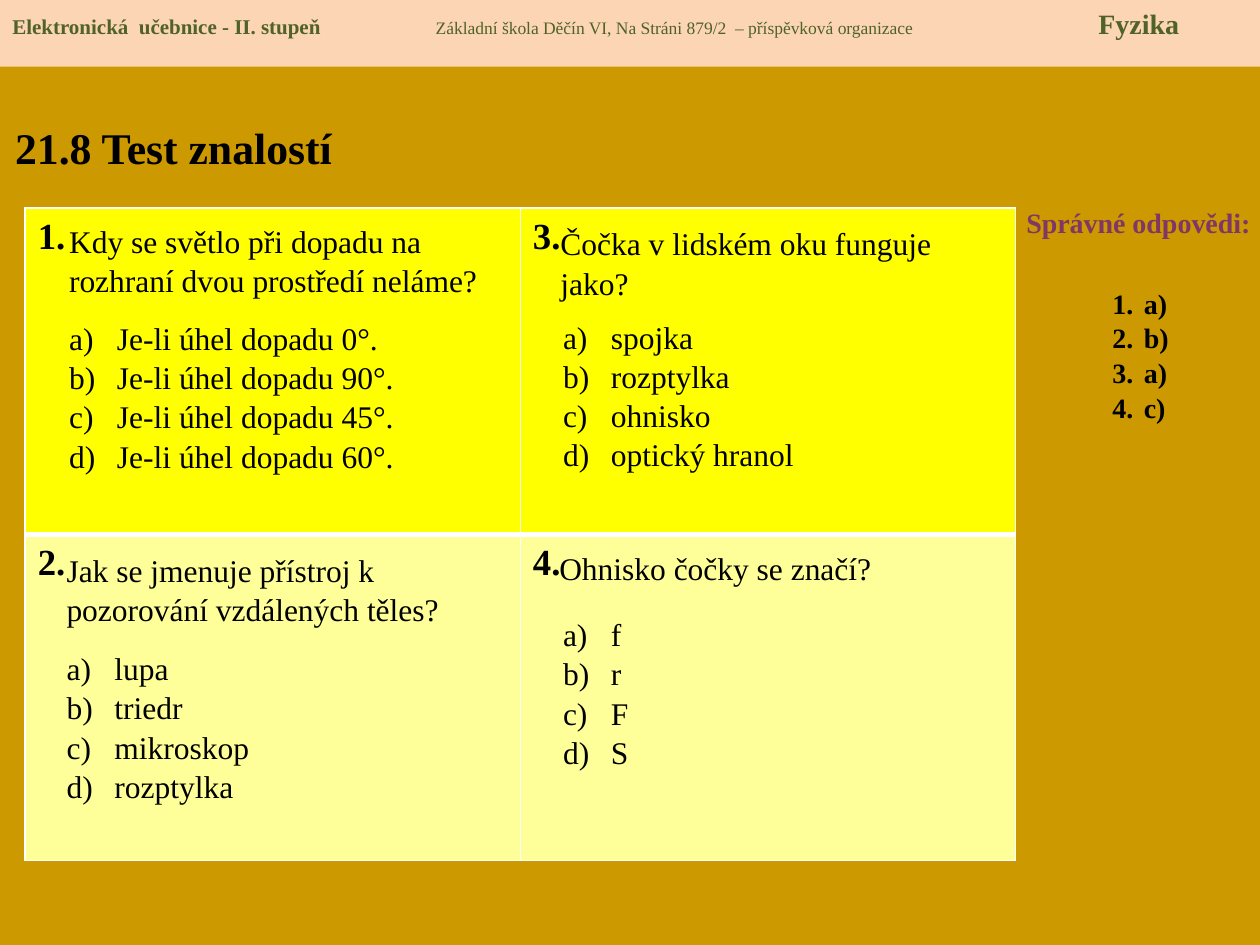
from lxml.etree import SubElement
from pptx import Presentation
from pptx.dml.color import RGBColor
from pptx.enum.shapes import MSO_SHAPE as Shape
from pptx.enum.text import MSO_ANCHOR as Anchor, PP_ALIGN as Align
from pptx.oxml.ns import qn
from pptx.util import Inches, Pt

COLORS = {
    "page": "CC9900", "band": "FCD5B5", "school": "4F6228", "text": "000000",
    "key": "813763", "top": "FFFF00", "bottom": "FFFF99", "border": "FFFFFF",
}
LEFT, TOP, COL, ROW = 0.2, 1.65, 3.93, 2.59
QUESTIONS = [
    (0, 0, "1.", "Kdy se světlo při dopadu na rozhraní dvou prostředí neláme?",
     ["Je-li úhel dopadu 0°.", "Je-li úhel dopadu 90°.",
      "Je-li úhel dopadu 45°.", "Je-li úhel dopadu 60°."],
     (0.25, 0.05, 3.54, 0.7), (0.25, 0.82, 3.61, 1.3)),
    (0, 1, "2.", "Jak se jmenuje přístroj k pozorování vzdálených těles?",
     ["lupa", "triedr", "mikroskop", "rozptylka"],
     (0.23, 0.07, 3.63, 0.7), (0.23, 0.85, 3.78, 1.3)),
    (1, 0, "3.", "Čočka v lidském oku funguje jako?",
     ["spojka", "rozptylka", "ohnisko", "optický hranol"],
     (0.22, 0.07, 3.17, 0.7), (0.24, 0.81, 3.31, 1.3)),
    (1, 1, "4.", "Ohnisko čočky se značí?", ["f", "r", "F", "S"],
     (0.21, 0.06, 3.39, 0.4), (0.24, 0.58, 3.78, 1.3)),
]


def write(paragraph, text, size, color="text", bold=False):
    run = paragraph.add_run()
    run.text = text
    style = {"name": "Times New Roman", "size": Pt(size), "bold": bold}
    for key, value in style.items():
        setattr(run.font, key, value)
    run.font.color.rgb = RGBColor.from_string(COLORS[color])


def add_lines(place, lines, size, color="text", bold=False, numbering=None, indent=0, **frame_format):
    frame = slide.shapes.add_textbox(*map(Inches, place)).text_frame
    for key, value in {"word_wrap": True, **frame_format}.items():
        setattr(frame, key, value)
    for index, line in enumerate(lines):
        paragraph = frame.add_paragraph() if index else frame.paragraphs[0]
        paragraph.line_spacing = 1.04
        write(paragraph, line, size, color, bold)
        if numbering:
            properties = paragraph._p.get_or_add_pPr()
            properties.set("marL", str(Inches(indent)))
            properties.set("indent", str(-Inches(indent)))
            SubElement(properties, qn("a:buFont"), typeface="+mj-lt")
            SubElement(properties, qn("a:buAutoNum"), type=numbering)
    return frame


deck = Presentation()
deck.slide_width, deck.slide_height = Inches(10), Inches(7.5)
slide = deck.slides.add_slide(deck.slide_layouts[5])
slide.background.fill.solid()
slide.background.fill.fore_color.rgb = RGBColor.from_string(COLORS["page"])

heading = slide.shapes.title
for key, value in zip(("left", "top", "width", "height"), (0.02, 0.73, 3.19, 0.87)):
    setattr(heading, key, Inches(value))
heading.text_frame.vertical_anchor = Anchor.MIDDLE
heading.text_frame.paragraphs[0].alignment = Align.LEFT
write(heading.text_frame.paragraphs[0], "21.8 Test znalostí", 25, bold=True)

key_title = add_lines((8.02, 1.57, 2.03, 0.37), ["Správné odpovědi:"], 16, "key", True,
                      margin_left=0, margin_right=0)
key_title.paragraphs[0].alignment = Align.CENTER

cards = slide.shapes.add_table(2, 2, *map(Inches, (LEFT, TOP, 2 * COL, 2 * ROW))).table
for column, row, number, question, options, question_place, options_place in QUESTIONS:
    cell = cards.cell(row, column)
    margins = {"margin_left": 0.1, "margin_right": 0.1, "margin_top": 0.07, "margin_bottom": 0.07}
    for key, value in margins.items():
        setattr(cell, key, Inches(value))
    write(cell.text_frame.paragraphs[0], number, 21, bold=True)
    properties = cell._tc.get_or_add_tcPr()
    for side in "LRTB":
        thick = (row, side) in ((0, "B"), (1, "T"))
        border = SubElement(properties, qn("a:ln" + side), w=str(Pt(3 if thick else 1)))
        SubElement(SubElement(border, qn("a:solidFill")), qn("a:srgbClr"), val=COLORS["border"])
    cell.fill.solid()
    cell.fill.fore_color.rgb = RGBColor.from_string(COLORS["bottom" if row else "top"])

add_lines((8.73, 1.94, 0.92, 1.97), ["a)", "b)", "a)", "c)"], 16, bold=True,
          numbering="arabicPeriod", indent=0.25, margin_top=Inches(0.32))

band = slide.shapes.add_shape(Shape.RECTANGLE, 0, 0, deck.slide_width, Inches(0.53))
band.shadow.inherit = False
band.fill.solid()
band.fill.fore_color.rgb = RGBColor.from_string(COLORS["band"])
band.line.fill.background()
band.text_frame.vertical_anchor = Anchor.TOP
header = band.text_frame.paragraphs[0]
header.alignment = Align.LEFT
tabs = SubElement(header._p.get_or_add_pPr(), qn("a:tabLst"))
for stop in (3.36, 8.62):
    SubElement(tabs, qn("a:tab"), pos=str(Inches(stop)), algn="l")
write(header, "Elektronická  učebnice - II. stupeň\t", 12, "school", True)
write(header, "Základní škola Děčín VI, Na Stráni 879/2  – příspěvková organizace\t", 10, "school")
write(header, "Fyzika", 16, "school", True)

for column, row, number, question, options, question_place, options_place in QUESTIONS:
    for lines, (dx, dy, width, height), numbering in (
        ([question], question_place, None),
        (options, options_place, "alphaLcParenR"),
    ):
        place = (LEFT + column * COL + dx, TOP + row * ROW + dy, width, height)
        add_lines(place, lines, 18, numbering=numbering, indent=0.38)

deck.save("out.pptx")
